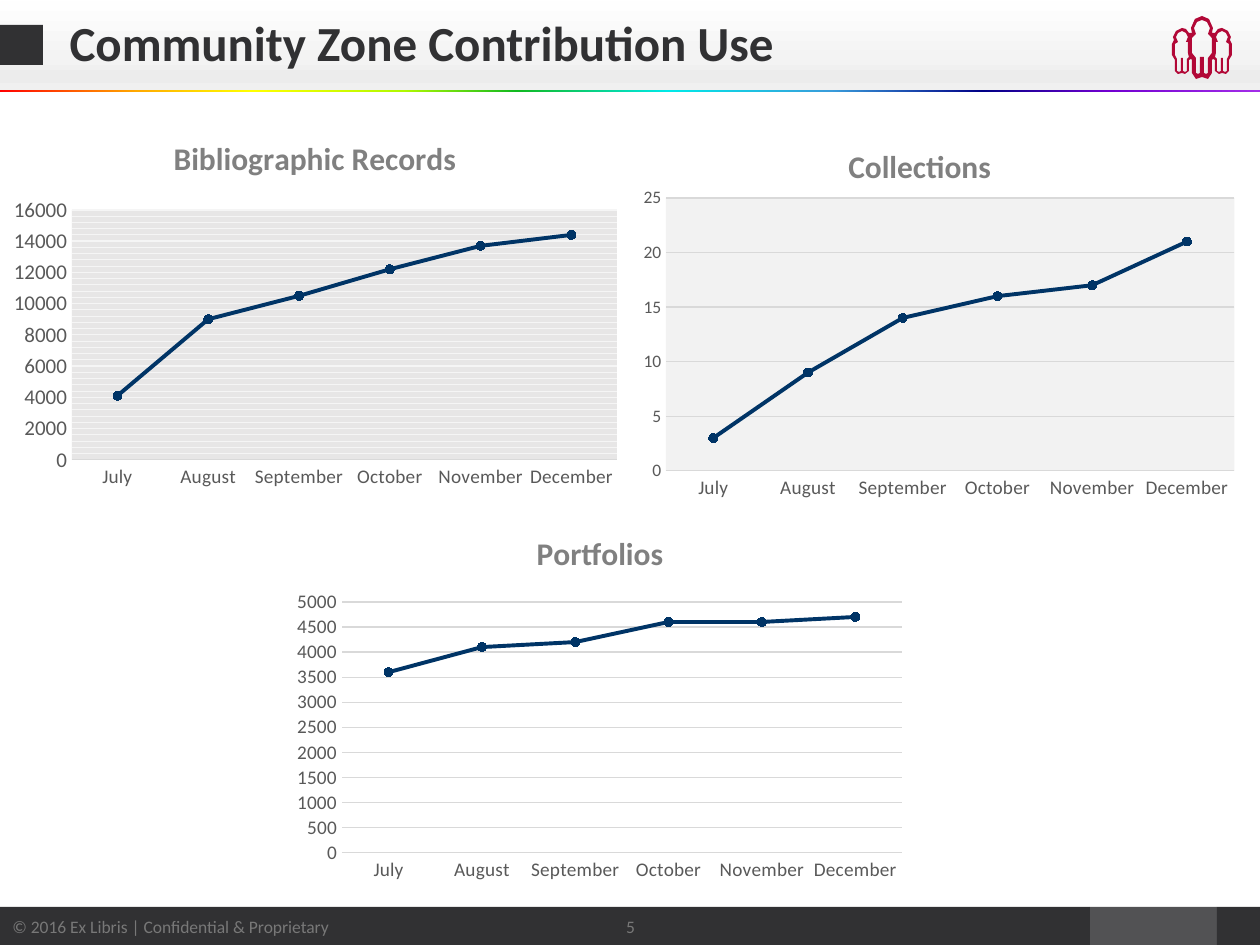
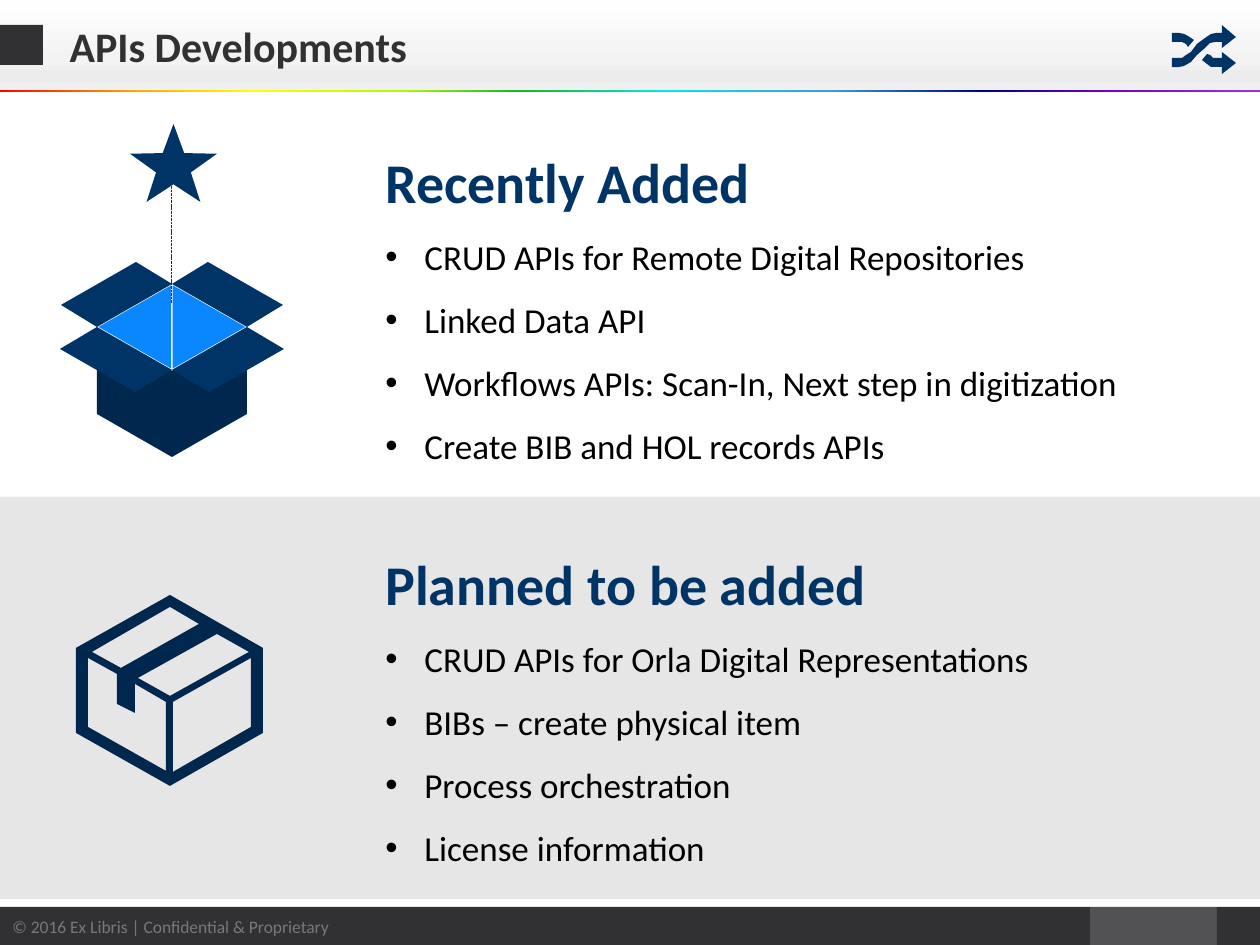
from lxml.etree import SubElement
from pptx import Presentation
from pptx.chart.data import CategoryChartData
from pptx.dml.color import RGBColor
from pptx.enum.chart import XL_CHART_TYPE, XL_MARKER_STYLE, XL_TICK_MARK
from pptx.enum.dml import MSO_LINE
from pptx.enum.shapes import MSO_CONNECTOR, MSO_SHAPE
from pptx.enum.text import MSO_ANCHOR, MSO_AUTO_SIZE, PP_ALIGN
from pptx.oxml.ns import qn
from pptx.util import Pt

EMU_PER_PX = 914400 / 126
SLIDE_WIDTH, SLIDE_HEIGHT = 1260, 945
TITLE_ONLY = 5
FONT = "Calibri"

NAVY, DEEP_NAVY, SKY, CRIMSON = "003466", "00274D", "0A87FF", "B20837"
CHARCOAL, SLATE, FOOTER_TEXT = "313133", "525254", "787878"
PANEL, GRID, AXIS_TEXT, CHART_TITLE = "E7E6E6", "D9D9D9", "595959", "808080"
HEADER_STOPS = [(0, "FEFEFE"), (66, "F3F3F3"), (83, "ECECEC"), (100, "F0F0F0")]
RAINBOW_STOPS = [
    (0, "FF0000"), (11, "FFAB00"), (20, "FFFF00"), (32, "B1F900"), (41, "11B920"),
    (53, "00E9E8"), (66, "399CDB"), (78, "000086"), (88, "7200D1"), (100, "A22DE8"),
]

MONTHS = ["July", "August", "September", "October", "November", "December"]
CHART_SIZE = (630, 378)
# Plot boxes are left, top, width, height inside the chart.
CHARTS = [
    {"title": "Bibliographic Records", "at": (0, 117), "plot": (72, 93, 545, 250),
     "values": [4100, 9000, 10500, 12200, 13700, 14400], "label_size": 12,
     "maximum": 16000, "step": 2000, "minor_step": 400,
     "plot_fill": PANEL, "grid": "F5F5F5"},
    {"title": "Portfolios", "at": (285, 512), "plot": (57, 90, 560, 251),
     "values": [3600, 4100, 4200, 4600, 4600, 4700], "label_size": 11,
     "maximum": 5000, "step": 500},
    {"title": "Collections", "at": (605, 125), "plot": (61, 73, 569, 273),
     "values": [3, 9, 14, 16, 17, 21], "label_size": 10,
     "maximum": 25, "step": 5, "plot_fill": "F2F2F2"},
]

API_LISTS = [
    (141, "Recently Added", [
        "CRUD APIs for Remote Digital Repositories",
        "Linked Data API",
        "Workflows APIs: Scan-In, Next step in digitization",
        "Create BIB and HOL records APIs"]),
    (543, "Planned to be added", [
        "CRUD APIs for Orla Digital Representations",
        "BIBs – create physical item",
        "Process orchestration",
        "License information"]),
]

# Right halves of the people icon, measured from its vertical axis.
PEOPLE_AXIS = 1202
PEOPLE_OUTLINE = [
    (0, 16), (7, 19), (11, 28), (10, 33), (13, 33), (16, 29), (20, 28), (26, 31),
    (29, 37), (28, 40), (30, 44), (30, 55), (27, 60), (27, 71), (24, 74), (20, 73),
    (17, 74), (13, 71), (13, 60), (11, 59), (10, 60), (10, 73), (6, 79), (0, 77)]
MIDDLE_PERSON = [
    (0, 20), (5, 22), (8, 28), (6, 34), (10, 38), (10, 53), (6, 58), (6, 73),
    (4, 74), (2, 73), (2, 57)]
SIDE_PERSON = [
    (19, 58), (19, 71), (17, 72), (15, 71), (15, 59), (13, 57), (14, 53), (14, 42),
    (16, 42), (14, 37), (16, 33), (20, 31), (24, 33), (26, 37), (24, 42), (27, 44),
    (27, 55), (25, 59), (25, 71), (23, 72), (21, 71), (21, 58)]

SHUFFLE_PARTS = [
    [(1172, 33), (1179, 33), (1184, 34), (1188, 36), (1194, 40), (1188, 47),
     (1186, 44), (1182, 42), (1172, 42)],
    [(1202, 60), (1207, 64), (1211, 67), (1222, 67), (1222, 74), (1236, 63),
     (1222, 52), (1222, 58), (1213, 58), (1210, 55), (1207, 54)],
    [(1215, 42), (1222, 42), (1222, 48), (1236, 37), (1222, 25), (1222, 33),
     (1216, 33), (1211, 34), (1205, 38), (1197, 44), (1191, 52), (1186, 55),
     (1182, 58), (1172, 58), (1172, 67), (1179, 67), (1184, 66), (1191, 62),
     (1197, 55), (1205, 48), (1210, 43)],
]

BOX_AXIS = 172
BOX_BASE = [(172, 284), (97, 327), (97, 414), (172, 457), (247, 414), (247, 327)]
BOX_INSIDE = [(172, 284), (97, 327), (172, 370)]
BOX_FLAPS = [
    [(61, 305), (97, 327), (172, 284), (136, 262)],
    [(60, 349), (97, 327), (172, 370), (135, 392)],
]
CLOSED_BOX = [
    [(263, 733), (263, 648), (170, 595), (76, 648), (76, 733), (170, 786)],
    [(249, 652), (170, 696), (138, 678), (217, 634)],
    [(121, 668), (92, 652), (170, 607), (199, 624)],
    [(88, 727), (88, 658), (117, 674), (117, 704), (135, 713), (135, 684),
     (166, 702), (166, 771)],
    [(173, 702), (251, 658), (251, 727), (173, 772)],
]


def px(length):
    return round(length * EMU_PER_PX)


def color(value):
    return RGBColor.from_string(value)


def set_values(target, values):
    for name, value in values.items():
        setattr(target, name, value)


def set_font(font, size, text_color, bold=False):
    set_values(font, {"name": FONT, "size": Pt(size), "bold": bold})
    font.color.rgb = color(text_color)


def set_line(line, line_color, width):
    line.color.rgb = color(line_color)
    line.width = Pt(width)


def add_solid_fill(parent, value):
    solid = SubElement(parent, qn("a:solidFill"))
    SubElement(solid, qn("a:srgbClr"), val=value)


def finish_shape(shape, fill, outline=None):
    shape.shadow.inherit = False
    if fill:
        shape.fill.solid()
        shape.fill.fore_color.rgb = color(fill)
    if outline:
        set_line(shape.line, outline, 0.75)
    else:
        shape.line.fill.background()


def add_box(slide, bounds, fill=None, kind=MSO_SHAPE.RECTANGLE):
    shape = slide.shapes.add_shape(kind, *map(px, bounds))
    finish_shape(shape, fill)
    return shape


def add_gradient_box(slide, bounds, stops, angle):
    shape = add_box(slide, bounds)
    shape.fill.gradient()
    shape.fill.gradient_angle = angle
    stop_list = shape._element.spPr.find(qn("a:gradFill")).find(qn("a:gsLst"))
    for old_stop in list(stop_list):
        stop_list.remove(old_stop)
    for position, value in stops:
        stop = SubElement(stop_list, qn("a:gs"), pos=str(position * 1000))
        SubElement(stop, qn("a:srgbClr"), val=value)


def add_outline(slide, contours, fill, outline=None):
    """Draw one freeform; contours after the first are holes."""
    builder = slide.shapes.build_freeform(*contours[0][0], scale=EMU_PER_PX)
    for index, contour in enumerate(contours):
        if index:
            builder.move_to(*contour[0])
        builder.add_line_segments(contour[1:], close=True)
    finish_shape(builder.convert_to_shape(), fill, outline)


def mirror(points, axis):
    return [(2 * axis - x, y) for x, y in points]


def write_line(frame, text, size, text_color, bold=False, align=PP_ALIGN.LEFT):
    frame.vertical_anchor = MSO_ANCHOR.MIDDLE
    paragraph = frame.paragraphs[0]
    paragraph.text = text
    paragraph.alignment = align
    set_font(paragraph.font, size, text_color, bold)
    return paragraph


def add_frame(slide):
    """Draw the header and footer bands."""
    add_box(slide, (1090, 907, 127, 40), SLATE)
    add_box(slide, (1217, 907, 43, 40), CHARCOAL)
    add_gradient_box(slide, (0, 1, SLIDE_WIDTH, 90), HEADER_STOPS, 270)
    footer = add_box(slide, (0, 907, 1090, 40), CHARCOAL)
    write_line(footer.text_frame, "© 2016 Ex Libris | Confidential & Proprietary",
               10, FOOTER_TEXT)
    add_box(slide, (0, 25, 43, 40), CHARCOAL)
    add_gradient_box(slide, (0, 90, SLIDE_WIDTH, 2), RAINBOW_STOPS, 0)


def add_titled_slide(presentation, title_text, top, size):
    slide = presentation.slides.add_slide(presentation.slide_layouts[TITLE_ONLY])
    add_frame(slide)
    title = slide.shapes.title
    set_values(title, {"left": px(57), "top": px(top),
                       "width": px(1142), "height": px(87)})
    title.text_frame.auto_size = MSO_AUTO_SIZE.NONE
    write_line(title.text_frame, title_text, size, CHARCOAL, True).line_spacing = 0.9
    slide.shapes._spTree.append(title._element)  # bring above the header band
    return slide


def add_page_number(slide, number):
    box = slide.shapes.add_textbox(*map(px, (557, 902, 147, 49)))
    box.text_frame.word_wrap = True
    write_line(box.text_frame, number, 10, FOOTER_TEXT, align=PP_ALIGN.CENTER)


def format_plot_area(chart, bounds, fill):
    plot_area = chart._chartSpace.chart.plotArea
    for old_layout in plot_area.findall(qn("c:layout")):
        plot_area.remove(old_layout)
    layout = SubElement(plot_area, qn("c:layout"))
    plot_area.insert(0, layout)
    manual = SubElement(layout, qn("c:manualLayout"))
    SubElement(manual, qn("c:layoutTarget"), val="inner")
    for side in "xy":
        SubElement(manual, qn(f"c:{side}Mode"), val="edge")
    for side, length, whole in zip("xywh", bounds, CHART_SIZE * 2):
        SubElement(manual, qn(f"c:{side}"), val=f"{length / whole:.4f}")
    if fill:
        add_solid_fill(SubElement(plot_area, qn("c:spPr")), fill)


def format_axes(chart, details):
    months, values = chart.category_axis, chart.value_axis
    for axis, size in ((months, 11), (values, details["label_size"])):
        set_values(axis, {"major_tick_mark": XL_TICK_MARK.NONE,
                          "minor_tick_mark": XL_TICK_MARK.NONE})
        set_font(axis.tick_labels.font, size, AXIS_TEXT)
    set_line(months.format.line, GRID, 0.75)
    values.format.line.fill.background()
    set_values(values, {"minimum_scale": 0, "maximum_scale": details["maximum"],
                        "major_unit": details["step"], "has_major_gridlines": True})
    grid = details.get("grid", GRID)
    set_line(values.major_gridlines.format.line, grid, 0.75)
    if "minor_step" in details:
        set_values(values, {"minor_unit": details["minor_step"],
                            "has_minor_gridlines": True})
        gridlines = values._element.find(qn("c:minorGridlines"))
        properties = SubElement(gridlines, qn("c:spPr"))
        add_solid_fill(SubElement(properties, qn("a:ln"), w=str(Pt(0.5))), grid)


def add_usage_chart(slide, details):
    data = CategoryChartData()
    data.categories = MONTHS
    data.add_series(details["title"], details["values"])
    chart = slide.shapes.add_chart(
        XL_CHART_TYPE.LINE_MARKERS, *map(px, details["at"] + CHART_SIZE), data).chart
    set_font(chart.font, 10, "000000")
    set_values(chart, {"has_legend": False, "has_title": True})
    heading = chart.chart_title.text_frame.paragraphs[0]
    heading.text = details["title"]
    set_font(heading.runs[0].font, 18, CHART_TITLE, True)
    chart.plots[0].vary_by_categories = False
    series = chart.plots[0].series[0]
    series.smooth = False
    set_line(series.format.line, NAVY, 2.25)
    set_values(series.marker, {"style": XL_MARKER_STYLE.CIRCLE, "size": 5})
    series.marker.format.fill.solid()
    series.marker.format.fill.fore_color.rgb = color(NAVY)
    set_line(series.marker.format.line, NAVY, 0.75)
    format_axes(chart, details)
    format_plot_area(chart, details["plot"], details.get("plot_fill"))


def add_people_icon(slide):
    def placed(points):
        return [(PEOPLE_AXIS + x, y) for x, y in points]

    def symmetric(half):
        right = placed(half)
        return right + mirror(right, PEOPLE_AXIS)[::-1]

    side = placed(SIDE_PERSON)
    add_outline(slide, [symmetric(PEOPLE_OUTLINE), symmetric(MIDDLE_PERSON),
                        side, mirror(side, PEOPLE_AXIS)], CRIMSON)


def add_open_box(slide):
    add_outline(slide, [BOX_BASE], DEEP_NAVY)
    parts = [(BOX_INSIDE, SKY, "FFFFFF")] + [(flap, NAVY, None) for flap in BOX_FLAPS]
    for points, fill, outline in parts:
        for half in (points, mirror(points, BOX_AXIS)):
            add_outline(slide, [half], fill, outline)
    string = slide.shapes.add_connector(
        MSO_CONNECTOR.STRAIGHT, *map(px, (171, 303, 171, 155)))
    set_line(string.line, NAVY, 0.5)
    string.line.dash_style = MSO_LINE.SQUARE_DOT
    SubElement(string._element.spPr, qn("a:effectLst"))
    star = add_box(slide, (130, 124, 87, 78), NAVY, MSO_SHAPE.STAR_5_POINT)
    star.adjustments[0] = 0.2


def add_api_list(slide, top, heading, items):
    box = slide.shapes.add_textbox(*map(px, (373, top, 799, 335)))
    frame = box.text_frame
    frame.word_wrap = True
    frame.paragraphs[0].text = heading
    set_font(frame.paragraphs[0].font, 32, NAVY, True)
    for item in items:
        paragraph = frame.add_paragraph()
        paragraph.text = item
        properties = paragraph._p.get_or_add_pPr()
        properties.set("marL", str(px(39)))
        properties.set("indent", str(px(-39)))
        SubElement(properties, qn("a:buFont"), typeface="Arial")
        SubElement(properties, qn("a:buChar"), char="•")
        paragraph.line_spacing = 1.5
        set_font(paragraph.font, 20, "000000")


def main():
    presentation = Presentation()
    set_values(presentation, {"slide_width": px(SLIDE_WIDTH),
                              "slide_height": px(SLIDE_HEIGHT)})

    usage = add_titled_slide(presentation, "Community Zone Contribution Use", 2, 28)
    add_page_number(usage, "5")
    for details in CHARTS:
        add_usage_chart(usage, details)
    add_people_icon(usage)

    apis = add_titled_slide(presentation, "APIs Developments", 5, 24)
    add_box(apis, (0, 497, SLIDE_WIDTH, 402), PANEL)
    for top, heading, items in API_LISTS:
        add_api_list(apis, top, heading, items)
    add_open_box(apis)
    add_outline(apis, CLOSED_BOX, DEEP_NAVY)
    for part in SHUFFLE_PARTS:
        add_outline(apis, [part], NAVY)

    presentation.save("out.pptx")


if __name__ == "__main__":
    main()
